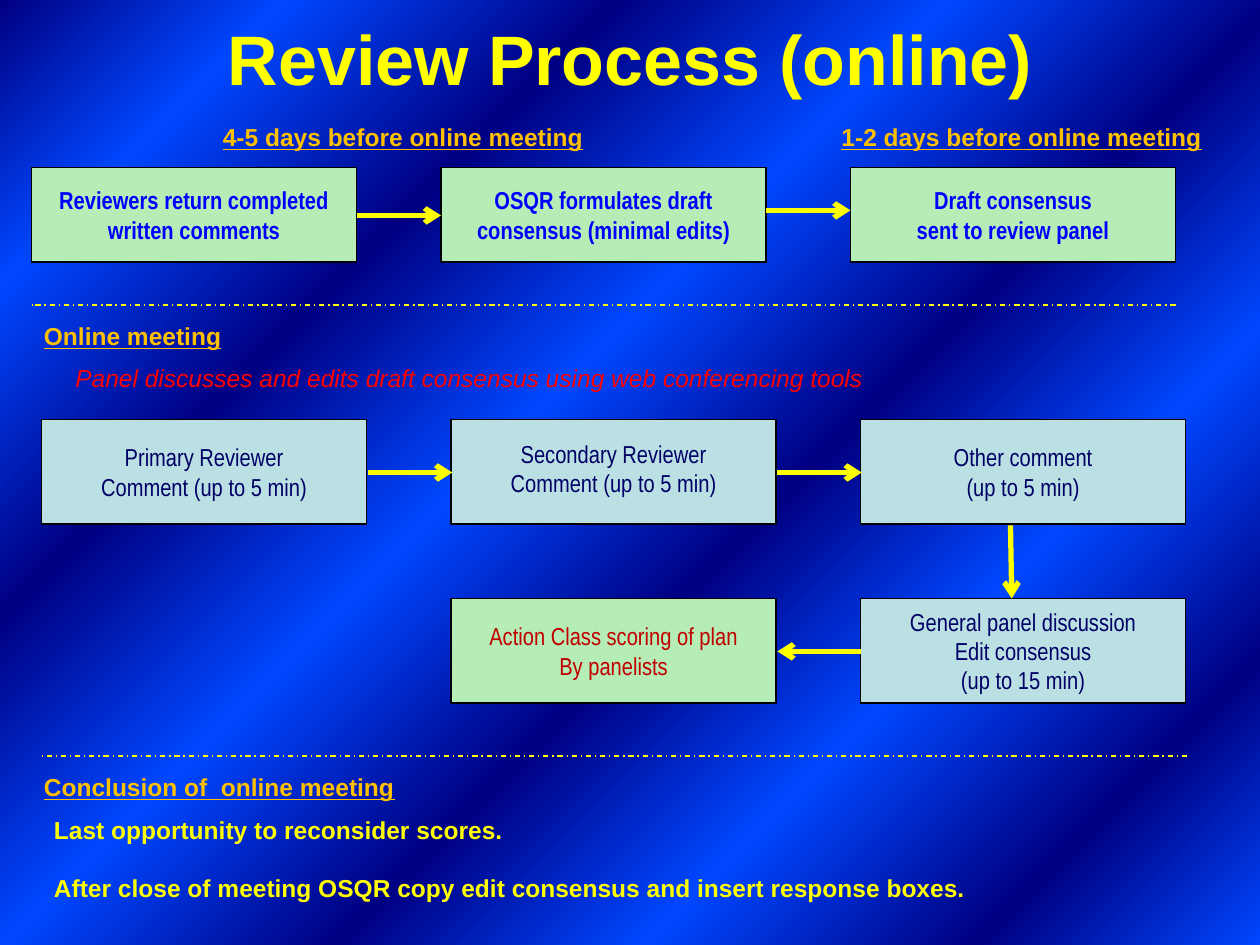
import pptx
import pptx.util
import pptx.dml.color
import pptx.enum.dml
import pptx.enum.shapes
import pptx.enum.text
import pptx.oxml
import pptx.oxml.ns
from pptx.util import Inches

ALIGN = pptx.enum.text.PP_ALIGN
MIDDLE = pptx.enum.text.MSO_ANCHOR.MIDDLE
GREEN, PALE = "B6ECB6", "BBE0E3"
YELLOW, GOLD, NAVY = "FFFF00", "FFC000", "000066"


def color(code):
    return pptx.dml.color.RGBColor.from_string(code)


def node(tag, inner="", **attrs):
    pairs = "".join(f' {key}="{value}"' for key, value in attrs.items())
    space = pptx.oxml.ns.nsdecls("a")
    return pptx.oxml.parse_xml(f"<a:{tag} {space}{pairs}>{inner}</a:{tag}>")


def write(frame, text, size=14, font="Arial", fill=YELLOW, bold=False,
          italic=False, under=False, align=ALIGN.LEFT, gap=0):
    for i, line in enumerate(text.split("\n")):
        para = frame.paragraphs[0] if i == 0 else frame.add_paragraph()
        para.alignment = align
        para.space_before = pptx.util.Pt(gap if i else 0)
        run = para.add_run()
        run.text = line
        face = run.font
        face.size = pptx.util.Pt(size)
        face.name = font
        face.bold, face.italic, face.underline = bold, italic, under
        face.color.rgb = color(fill)


class Deck:
    narrow = "Arial Narrow"
    wide = 2.58
    step = 3.25

    def __init__(self):
        self.file = pptx.Presentation()
        self.file.slide_width = Inches(10)
        self.file.slide_height = Inches(7.5)
        self.slide = self.file.slides.add_slide(self.file.slide_layouts[5])
        self.shapes = self.slide.shapes

    def backdrop(self, dark, light, marks):
        fill = self.slide.background.fill
        fill.gradient()
        fill.gradient_angle = 315
        stops = self.slide.element.xpath(".//p:bg//a:gsLst")[0]
        for stop in list(stops):
            stops.remove(stop)
        for i, mark in enumerate(marks):
            tone = light if i % 2 else dark
            stops.append(node("gs", f'<a:srgbClr val="{tone}"/>', pos=mark * 1000))

    def title(self, text):
        shape = self.shapes.title
        shape.left, shape.top = Inches(0.5), Inches(0)
        shape.width, shape.height = Inches(9), Inches(0.92)
        shape.text_frame.vertical_anchor = MIDDLE
        write(shape.text_frame, text, size=40, bold=True, align=ALIGN.CENTER)

    def label(self, text, left, top, width=3.42, height=0.34, **style):
        box = self.shapes.add_textbox(
            Inches(left), Inches(top), Inches(width), Inches(height))
        box.text_frame.word_wrap = True
        write(box.text_frame, text, **style)

    def head(self, text, left, top):
        self.label(text, left, top, fill=GOLD, bold=True, under=True)

    def box(self, text, left, top, height, fill, ink, bold=False, lift=0):
        shape = self.shapes.add_shape(
            pptx.enum.shapes.MSO_SHAPE.FLOWCHART_PROCESS,
            Inches(left), Inches(top), Inches(self.wide), Inches(height))
        shape.shadow.inherit = False
        shape.fill.solid()
        shape.fill.fore_color.rgb = color(fill)
        shape.line.color.rgb = color("000000")
        shape.line.width = pptx.util.Pt(0.75)
        frame = shape.text_frame
        frame.word_wrap = False
        frame.vertical_anchor = MIDDLE
        frame.margin_bottom = Inches(0.05 + 2 * lift)
        write(frame, text, font=self.narrow, fill=ink, bold=bold,
              align=ALIGN.CENTER)

    def line(self, start, end, width):
        link = self.shapes.add_connector(
            pptx.enum.shapes.MSO_CONNECTOR.STRAIGHT,
            *(Inches(n) for n in (*start, *end)))
        link.line.color.rgb = color(YELLOW)
        link.line.width = pptx.util.Pt(width)
        link.element.spPr.append(node("effectLst"))
        return link

    def rule(self, start, end):
        link = self.line(start, end, 0.75)
        link.line.dash_style = pptx.enum.dml.MSO_LINE.DASH_DOT

    def arrow(self, start, end):
        link = self.line(start, end, 3)
        link.element.xpath(".//a:ln")[0].append(node("tailEnd", type="arrow"))


def main():
    deck = Deck()
    deck.backdrop("000082", "0047FF", (0, 13, 28, 43, 58, 72, 87, 100))
    deck.title("Review Process (online)")

    deck.head("4-5 days before online meeting", 1.67, 0.92)
    deck.head("1-2 days before online meeting", 6.58, 0.92)
    drafts = (
        "Reviewers return completed\nwritten comments",
        "OSQR formulates draft\nconsensus (minimal edits)",
        "Draft consensus\nsent to review panel",
    )
    for i, text in enumerate(drafts):
        deck.box(text, 0.25 + i * deck.step, 1.33, 0.75, GREEN, "0000FF", bold=True)
    deck.rule((9.33, 2.42), (0.25, 2.42))

    deck.head("Online meeting", 0.25, 2.5)
    deck.label(
        "Panel discusses and edits draft consensus using web conferencing tools",
        0.5, 2.83, width=8.67, fill="FF0000", italic=True)
    talks = (
        ("Primary Reviewer\nComment (up to 5 min)", 0),
        ("Secondary Reviewer\nComment (up to 5 min)", 0.03),
        ("Other comment\n(up to 5 min)", 0),
    )
    cols = [0.33 + i * deck.step for i in range(3)]
    for left, (text, lift) in zip(cols, talks):
        deck.box(text, left, 3.33, 0.83, PALE, NAVY, lift=lift)
    deck.box("Action Class scoring of plan\nBy panelists",
             cols[1], 4.75, 0.83, GREEN, "C00000")
    deck.box("General panel discussion\nEdit consensus\n(up to 15 min)",
             cols[2], 4.75, 0.83, PALE, NAVY)
    deck.rule((9.42, 6), (0.33, 6))

    deck.head("Conclusion of  online meeting", 0.25, 6.08)
    deck.label(
        "Last opportunity to reconsider scores.\n"
        "After close of meeting OSQR copy edit consensus and insert response boxes.",
        0.33, 6.42, width=9, height=0.81, bold=True, gap=16)

    for left, top in ((2.83, 1.71), (6.08, 1.67), (2.92, 3.75), (6.17, 3.75)):
        deck.arrow((left, top), (left + 0.67, top))
    deck.arrow((8.02, 4.17), (8.03, 4.75))
    deck.arrow((6.83, 5.17), (6.17, 5.17))
    deck.file.save("out.pptx")


if __name__ == "__main__":
    main()
